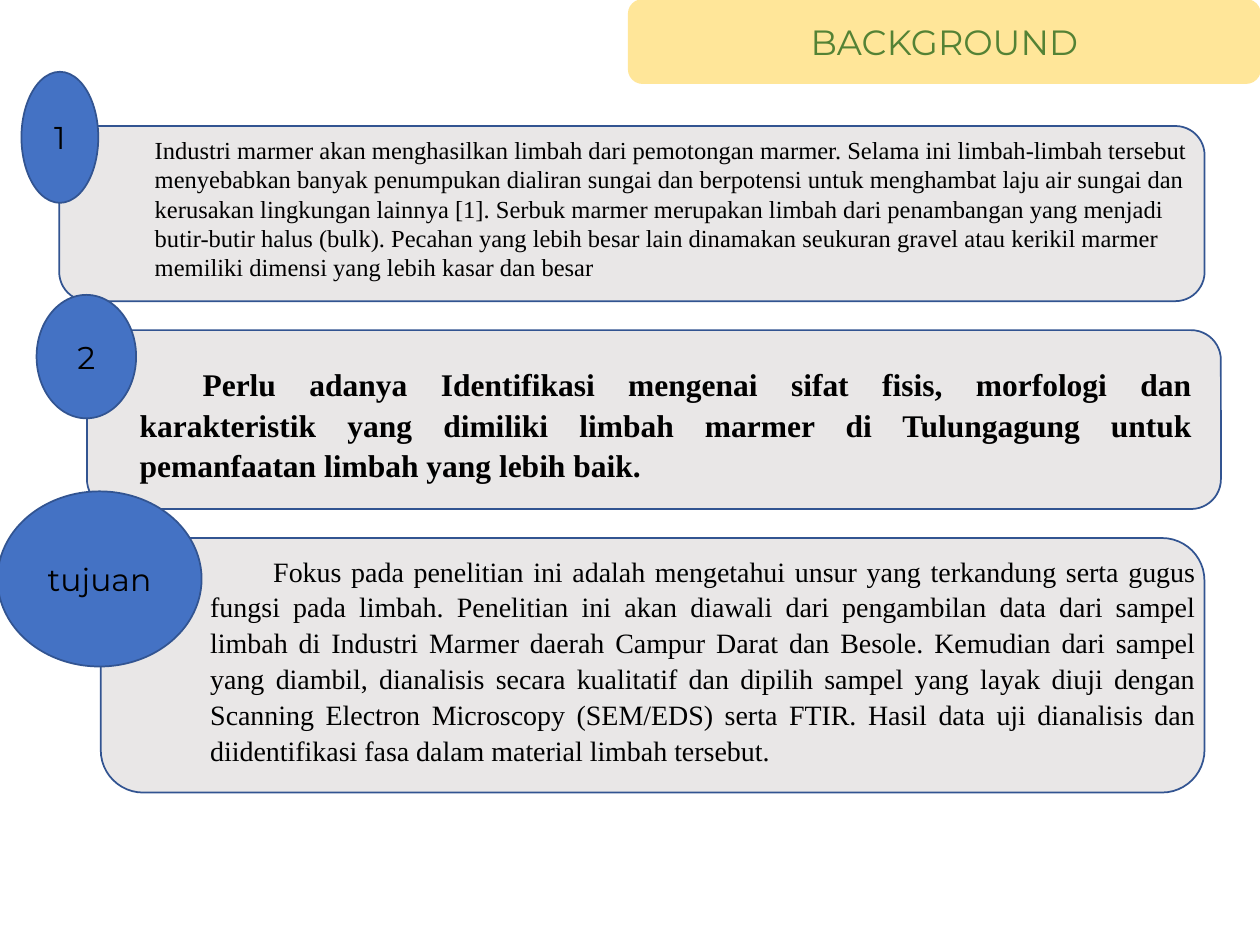
from pptx import Presentation
from pptx.dml.color import RGBColor
from pptx.enum import shapes, text
from pptx.util import Inches, Pt

COLORS = {
    "page": "FFFFFF", "banner": "FFE699", "title": "548235",
    "panel": "E9E7E7", "badge": "4472C4", "outline": "325491", "text": "000000",
}
HEADING_FONT, BODY_FONT = "Montserrat", "Times New Roman"
BANNER_BOX = (4.99, 0, 5.01, 0.66)

# Boxes are left, top, width, height in inches.
SECTIONS = [
    {
        "label": "1", "panel": (0.47, 1, 9.09, 1.39), "badge": (0.17, 0.57, 0.61, 1.04),
        "body_box": (1.13, 1.02, 8.4, 1.28), "size": 14, "bold": False, "justified": False,
        "body": "Industri marmer akan menghasilkan limbah dari pemotongan marmer. Selama ini "
                "limbah-limbah tersebut menyebabkan banyak penumpukan dialiran sungai dan "
                "berpotensi untuk menghambat laju air sungai dan kerusakan lingkungan lainnya "
                "[1]. Serbuk marmer merupakan limbah dari penambangan yang menjadi butir-butir "
                "halus (bulk). Pecahan yang lebih besar lain dinamakan seukuran gravel atau "
                "kerikil marmer memiliki dimensi yang lebih kasar dan besar",
    },
    {
        "label": "2", "panel": (0.69, 2.62, 9, 1.42), "badge": (0.29, 2.34, 0.79, 0.98),
        "body_box": (1.01, 2.83, 8.55, 1.05), "size": 18, "bold": True, "justified": True,
        "body": "Perlu adanya Identifikasi mengenai sifat fisis, morfologi dan karakteristik "
                "yang dimiliki limbah marmer di Tulungagung untuk pemanfaatan limbah yang "
                "lebih baik.",
    },
    {
        "label": "tujuan", "panel": (0.8, 4.27, 8.76, 2.02), "badge": (-0.02, 3.9, 1.62, 1.39),
        "body_box": (1.57, 4.33, 8.02, 1.81), "size": 16, "bold": False, "justified": True,
        "body": "Fokus pada penelitian ini adalah mengetahui unsur yang terkandung serta gugus "
                "fungsi pada limbah. Penelitian ini akan diawali dari pengambilan data dari "
                "sampel limbah di Industri Marmer daerah Campur Darat dan Besole. Kemudian dari "
                "sampel yang diambil, dianalisis secara kualitatif dan dipilih sampel yang layak "
                "diuji dengan Scanning Electron Microscopy (SEM/EDS) serta FTIR. Hasil data uji "
                "dianalisis dan diidentifikasi fasa dalam material limbah tersebut.",
    },
]


def color(name):
    return RGBColor.from_string(COLORS[name])


def inches(box):
    return [Inches(value) for value in box]


def add_filled(slide, kind, box, fill, outline):
    shape = slide.shapes.add_shape(kind, *inches(box))
    shape.shadow.inherit = False
    shape.fill.solid()
    shape.fill.fore_color.rgb = color(fill)
    shape.line.color.rgb = color(outline)
    shape.line.width = Pt(1)
    return shape


def write(shape, words, font_name, size, ink="text", bold=False,
          align=text.PP_ALIGN.CENTER, anchor=text.MSO_ANCHOR.MIDDLE):
    frame = shape.text_frame
    frame.word_wrap = True
    frame.vertical_anchor = anchor
    paragraph = frame.paragraphs[0]
    paragraph.text = words
    paragraph.alignment = align
    font = paragraph.runs[0].font
    font.name, font.size, font.bold = font_name, Pt(size), bold
    font.color.rgb = color(ink)
    return paragraph


def add_title(slide):
    title = slide.shapes.title
    title.left, title.top, title.width, title.height = inches(BANNER_BOX)
    write(title, "BACKGROUND", HEADING_FONT, 20, "title")
    banner = add_filled(slide, shapes.MSO_SHAPE.ROUNDED_RECTANGLE, BANNER_BOX,
                        "banner", "banner")
    title._element.addprevious(banner._element)


def add_panel(slide, section):
    add_filled(slide, shapes.MSO_SHAPE.ROUNDED_RECTANGLE, section["panel"],
               "panel", "outline")
    badge = add_filled(slide, shapes.MSO_SHAPE.OVAL, section["badge"], "badge", "outline")
    write(badge, section["label"], HEADING_FONT, 18)


def add_body(slide, section):
    body = slide.shapes.add_textbox(*inches(section["body_box"]))
    justified = section["justified"]
    paragraph = write(
        body, section["body"], BODY_FONT, section["size"], bold=section["bold"],
        align=text.PP_ALIGN.JUSTIFY if justified else text.PP_ALIGN.LEFT,
        anchor=text.MSO_ANCHOR.TOP)
    body.text_frame.auto_size = text.MSO_AUTO_SIZE.SHAPE_TO_FIT_TEXT
    if justified:
        paragraph.line_spacing = 1.07
        paragraph.space_after = Pt(8)
        paragraph._p.get_or_add_pPr().set("indent", str(Inches(0.5)))


def main():
    deck = Presentation()
    deck.slide_width, deck.slide_height = Inches(10), Inches(7.5)
    slide = deck.slides.add_slide(deck.slide_layouts[5])
    slide.background.fill.solid()
    slide.background.fill.fore_color.rgb = color("page")
    add_title(slide)
    for section in SECTIONS:
        add_panel(slide, section)
    for section in SECTIONS:
        add_body(slide, section)
    deck.save("out.pptx")


if __name__ == "__main__":
    main()
